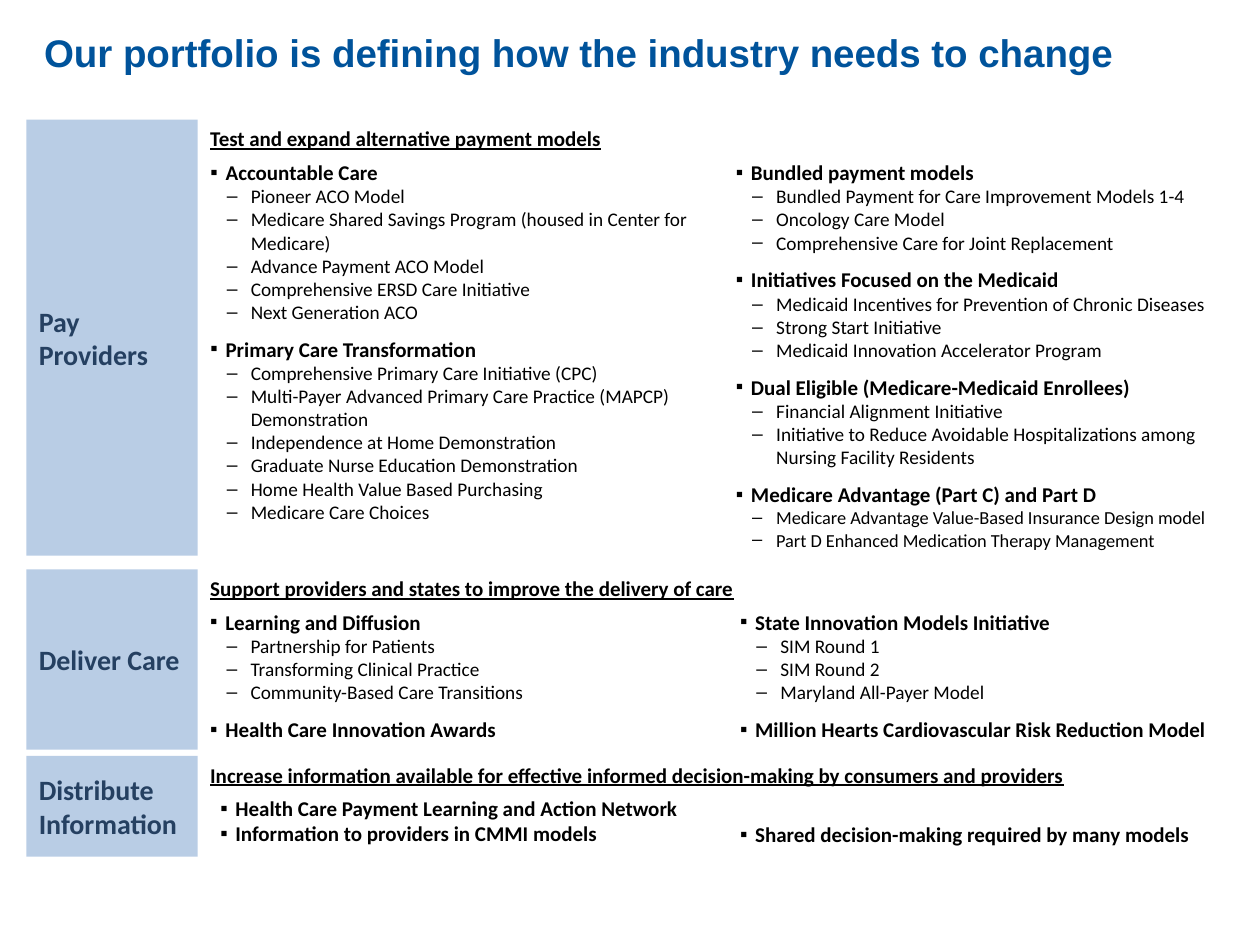
"""Build the portfolio slide: three bands, each with a label, a heading and two lists."""
from dataclasses import dataclass
from typing import Optional

from lxml.etree import SubElement
from pptx import Presentation
from pptx.dml.color import RGBColor
from pptx.enum.shapes import MSO_SHAPE
from pptx.enum.text import MSO_ANCHOR, MSO_AUTO_SIZE, PP_ALIGN
from pptx.oxml.ns import qn
from pptx.util import Inches, Pt

TITLE_BLUE = RGBColor(0x00, 0x53, 0x9B)
LABEL_BLUE = RGBColor(0xB9, 0xCD, 0xE5)
LABEL_NAVY = RGBColor(0x25, 0x40, 0x61)
BLACK = RGBColor(0x00, 0x00, 0x00)

WIDTH, HEIGHT = Inches(10), Inches(7.5)
COLUMNS, ROWS = 100, 75
LABEL_LEFT, LABEL_WIDTH = 2.1, 13.6
CONTENT_LEFT, CONTENT_WIDTH = 15.7, 82.4
LIST_DROP, LIST_WIDTH = 2.65, 40.7
GROUP_GAP = 7.3


@dataclass(frozen=True)
class Group:
    """A bold entry with its dashed items."""
    name: str
    items: tuple[str, ...] = ()
    size: float = 11
    gap: float = GROUP_GAP


@dataclass(frozen=True)
class Column:
    """A list of groups, placed by its left column and rows below the first list row."""
    left: float
    groups: tuple[Group, ...]
    drop: float = 0
    placeholder: Optional[int] = None


@dataclass(frozen=True)
class Band:
    """A labelled band of the portfolio."""
    label: str
    heading: str
    top: float
    height: float
    columns: tuple[Column, ...]


BANDS = (
    Band("Pay Providers", "Test and expand alternative payment models", 9.5, 34.6, (
        Column(15.7, (
            Group("Accountable Care", (
                "Pioneer ACO Model",
                "Medicare Shared Savings Program (housed in Center for Medicare)",
                "Advance Payment ACO Model",
                "Comprehensive ERSD Care Initiative",
                "Next Generation ACO")),
            Group("Primary Care Transformation", (
                "Comprehensive Primary Care Initiative (CPC)",
                "Multi-Payer Advanced Primary Care Practice (MAPCP) Demonstration",
                "Independence at Home Demonstration",
                "Graduate Nurse Education Demonstration",
                "Home Health Value Based Purchasing",
                "Medicare Care Choices")),
        ), placeholder=1),
        Column(57.4, (
            Group("Bundled payment models", (
                "Bundled Payment for Care Improvement Models 1-4",
                "Oncology Care Model",
                "Comprehensive Care for Joint Replacement")),
            Group("Initiatives Focused on the Medicaid", (
                "Medicaid Incentives for Prevention of Chronic Diseases",
                "Strong Start Initiative",
                "Medicaid Innovation Accelerator Program")),
            Group("Dual Eligible (Medicare-Medicaid Enrollees)", (
                "Financial Alignment Initiative",
                "Initiative to Reduce Avoidable Hospitalizations among "
                "Nursing Facility Residents")),
            Group("Medicare Advantage (Part C) and Part D", (
                "Medicare Advantage Value-Based Insurance Design model",
                "Part D Enhanced Medication Therapy Management"), size=10.5),
        ), placeholder=2),
    )),
    Band("Deliver Care", "Support providers and states to improve the delivery of care",
         45.2, 14.3, (
             Column(15.7, (
                 Group("Learning and Diffusion", (
                     "Partnership for Patients",
                     "Transforming Clinical Practice",
                     "Community-Based Care Transitions")),
                 Group("Health Care Innovation Awards"))),
             Column(57.75, (
                 Group("State Innovation Models Initiative", (
                     "SIM Round 1", "SIM Round 2", "Maryland All-Payer Model")),
                 Group("Million Hearts Cardiovascular Risk Reduction Model"))),
         )),
    Band("Distribute Information",
         "Increase information available for effective informed decision-making "
         "by consumers and providers", 60, 8, (
             Column(16.5, (
                 Group("Health Care Payment Learning and Action Network"),
                 Group("Information to providers in CMMI models", gap=0))),
             Column(57.75, (Group("Shared decision-making required by many models"),), drop=2.04),
         )),
)


def cells(left: float, top: float, width: float, height: float) -> tuple[int, ...]:
    """Turn grid columns and rows into slide lengths."""
    column, row = WIDTH / COLUMNS, HEIGHT / ROWS
    return round(left * column), round(top * row), round(width * column), round(height * row)


def move(shape, area: tuple[int, ...]) -> None:
    """Put a shape on the given area."""
    shape.left, shape.top, shape.width, shape.height = area


def style(paragraph, size: float, color: RGBColor, bold: bool = True,
          face: str = "Calibri") -> None:
    """Set the font of a whole paragraph."""
    font = paragraph.font
    font.name, font.size, font.bold = face, Pt(size), bold
    font.color.rgb = color


def add_entry(frame, first: bool, text: str, mark: str, margin: float, hang: float,
              size: float, bold: bool, gap: float = 0) -> None:
    """Add one bulleted paragraph to a list."""
    entry = frame.paragraphs[0] if first else frame.add_paragraph()
    entry.text = text
    entry.alignment = PP_ALIGN.LEFT
    entry.space_before = Pt(gap)
    properties = entry._p.get_or_add_pPr()
    properties.set("marL", str(Inches(margin)))
    properties.set("indent", str(-Inches(hang)))
    SubElement(properties, qn("a:buFont"), typeface="Arial")
    SubElement(properties, qn("a:buChar"), char=mark)
    style(entry, size, BLACK, bold)


def draw_column(slide, column: Column, band: Band) -> None:
    """Draw one list of a band."""
    drop = LIST_DROP + column.drop
    area = cells(column.left, band.top + drop, LIST_WIDTH, band.height - drop)
    if column.placeholder is None:
        listing = slide.shapes.add_textbox(*area)
    else:
        listing = slide.placeholders[column.placeholder]
        move(listing, area)
    frame = listing.text_frame
    frame.word_wrap = True
    frame.auto_size = MSO_AUTO_SIZE.NONE
    for index, group in enumerate(column.groups):
        first = index == 0
        add_entry(frame, first, group.name, "▪", 0.12, 0.12, 12, True, 0 if first else group.gap)
        for item in group.items:
            add_entry(frame, False, item, "‒", 0.32, 0.19, group.size, False)


def draw_band(slide, band: Band) -> None:
    """Draw the label, heading and lists of a band."""
    label = slide.shapes.add_shape(
        MSO_SHAPE.RECTANGLE, *cells(LABEL_LEFT, band.top, LABEL_WIDTH, band.height))
    label.shadow.inherit = False
    label.fill.solid()
    label.fill.fore_color.rgb = LABEL_BLUE
    label.line.fill.background()
    label.text_frame.word_wrap = True
    label.text_frame.vertical_anchor = MSO_ANCHOR.MIDDLE
    label.text_frame.text = band.label
    name = label.text_frame.paragraphs[0]
    name.alignment = PP_ALIGN.LEFT
    style(name, 16, LABEL_NAVY)

    heading = slide.shapes.add_textbox(*cells(CONTENT_LEFT, band.top, CONTENT_WIDTH, 3))
    heading.text_frame.word_wrap = True
    heading.text_frame.text = band.heading
    purpose = heading.text_frame.paragraphs[0]
    style(purpose, 12, BLACK)
    purpose.font.underline = True

    for column in band.columns:
        draw_column(slide, column, band)


def main() -> None:
    """Build and save the slide."""
    deck = Presentation()
    deck.slide_width, deck.slide_height = WIDTH, HEIGHT
    slide = deck.slides.add_slide(deck.slide_layouts.get_by_name("Two Content"))
    title = slide.shapes.title
    move(title, cells(2.5, 1.3, 95, 5.7))
    title.text_frame.text = "Our portfolio is defining how the industry needs to change"
    title.text_frame.auto_size = MSO_AUTO_SIZE.NONE
    title.text_frame.vertical_anchor = MSO_ANCHOR.MIDDLE
    message = title.text_frame.paragraphs[0]
    message.alignment = PP_ALIGN.LEFT
    style(message, 22, TITLE_BLUE, face="Arial")
    for band in BANDS:
        draw_band(slide, band)
    deck.save("out.pptx")


if __name__ == "__main__":
    main()
